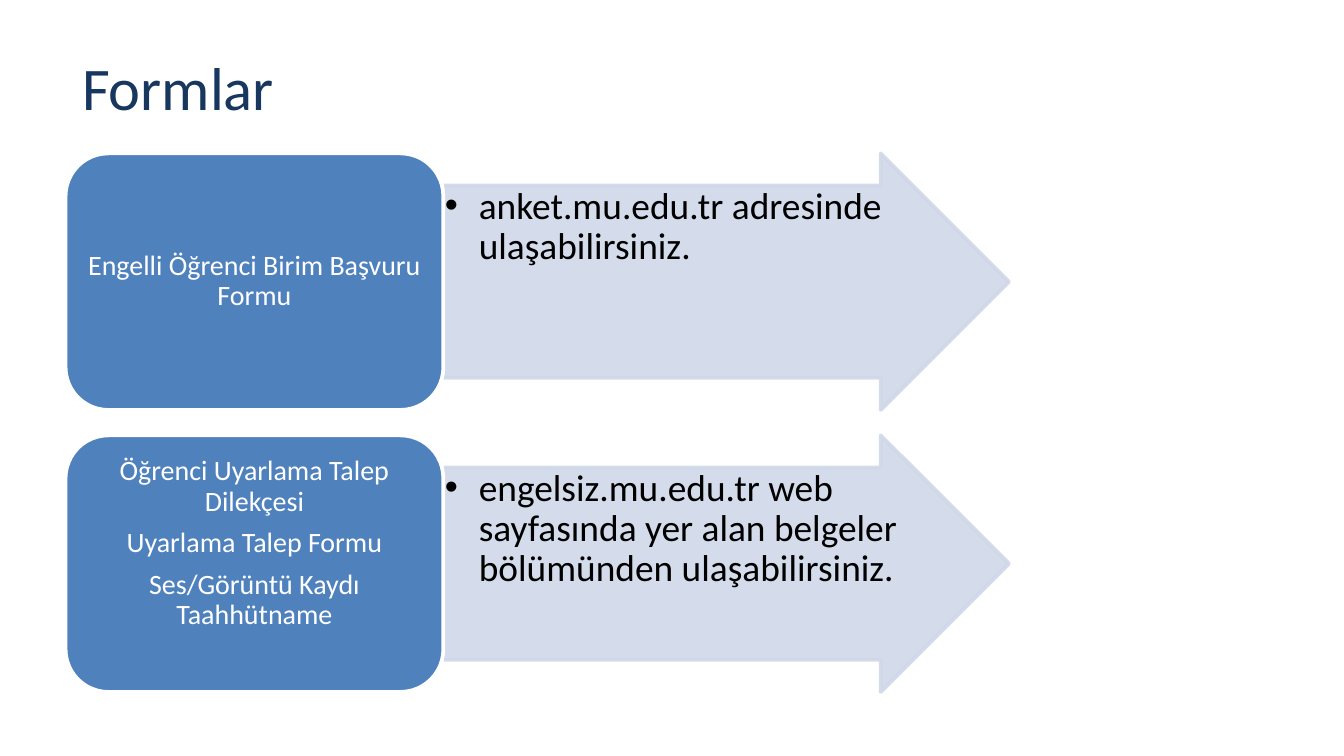
"""Build the slide that shows where each form can be found."""

import dataclasses

import lxml.etree
import pptx
import pptx.dml.color
import pptx.enum.shapes
import pptx.enum.text
import pptx.oxml.ns
import pptx.util

Cm = pptx.util.Cm
Pt = pptx.util.Pt
ALIGN = pptx.enum.text.PP_ALIGN
ANCHOR = pptx.enum.text.MSO_ANCHOR
SHAPE = pptx.enum.shapes.MSO_SHAPE
qn = pptx.oxml.ns.qn

FONT = "Calibri"
NAVY, BLUE, PALE, WHITE, BLACK = "17375E", "4F81BD", "D0D8E8", "FFFFFF", "000000"
LEFT, TOP, ROW_STEP, ROW_HEIGHT = 1.24, 2.9, 5.33, 4.85
BOX_WIDTH, ARROW_WIDTH = 7.14, 10.69


@dataclasses.dataclass
class FormRow:
    forms: list[str]
    source: str
    bottom_inset: float = 0.08


ROWS = [
    FormRow(["Engelli Öğrenci Birim Başvuru Formu"], "anket.mu.edu.tr adresinde ulaşabilirsiniz."),
    FormRow(
        ["Öğrenci Uyarlama Talep Dilekçesi", "Uyarlama Talep Formu", "Ses/Görüntü Kaydı Taahhütname"],
        "engelsiz.mu.edu.tr web sayfasında yer alan belgeler bölümünden ulaşabilirsiniz.",
        bottom_inset=0.84,
    ),
]


def color(value: str) -> pptx.dml.color.RGBColor:
    return pptx.dml.color.RGBColor.from_string(value)


def write_text(
    shape, texts: list[str], *, size: float, fill: str, align=ALIGN.LEFT, anchor=ANCHOR.MIDDLE,
    insets=(0.25, 0.13, 0.25, 0.13), line_spacing=0.9, space_after=0, bullet=False,
) -> None:
    frame = shape.text_frame
    frame.word_wrap = True
    frame.auto_size = pptx.enum.text.MSO_AUTO_SIZE.NONE
    frame.vertical_anchor = anchor
    frame.margin_left, frame.margin_top, frame.margin_right, frame.margin_bottom = map(Cm, insets)
    for index, text in enumerate(texts):
        paragraph = frame.paragraphs[0] if index == 0 else frame.add_paragraph()
        paragraph.alignment = align
        paragraph.line_spacing = line_spacing
        paragraph.space_before = Pt(0)
        paragraph.space_after = Pt(space_after)
        if bullet:
            add_bullet(paragraph)
        run = paragraph.add_run()
        run.text = text
        run.font.name = FONT
        run.font.size = Pt(size)
        run.font.color.rgb = color(fill)


def add_bullet(paragraph) -> None:
    paragraph.level = 1
    properties = paragraph._p.get_or_add_pPr()
    properties.set("marL", str(Cm(0.64)))
    properties.set("indent", str(-Cm(0.64)))
    lxml.etree.SubElement(properties, qn("a:buFont")).set("typeface", "Arial")
    lxml.etree.SubElement(properties, qn("a:buChar")).set("char", "•")


def add_panel(slide, kind, left: float, top: float, width: float, *, fill: str, line: str, opacity=100):
    shape = slide.shapes.add_shape(kind, Cm(left), Cm(top), Cm(width), Cm(ROW_HEIGHT))
    shape.shadow.inherit = False
    shape.fill.solid()
    shape.fill.fore_color.rgb = color(fill)
    shape.line.color.rgb = color(line)
    shape.line.width = Pt(2)
    if opacity < 100:
        for element in shape._element.spPr.iter(qn("a:srgbClr")):
            lxml.etree.SubElement(element, qn("a:alpha")).set("val", str(opacity * 1000))
    return shape


def add_row(slide, row: FormRow, top: float) -> None:
    arrow = add_panel(
        slide, SHAPE.RIGHT_ARROW, LEFT + BOX_WIDTH, top, ARROW_WIDTH, fill=PALE, line=PALE, opacity=90
    )
    arrow.adjustments[0] = 0.75
    arrow.adjustments[1] = 0.5
    write_text(
        arrow, [row.source], size=20, fill=BLACK, anchor=ANCHOR.TOP,
        insets=(0.03, 0.03, 0.03, 0.03), bullet=True,
    )
    box = add_panel(slide, SHAPE.ROUNDED_RECTANGLE, LEFT, top, BOX_WIDTH, fill=BLUE, line=WHITE)
    write_text(
        box, row.forms, size=15, fill=WHITE, align=ALIGN.CENTER,
        insets=(0.15, 0.08, 0.15, row.bottom_inset), space_after=6,
    )


def main() -> None:
    presentation = pptx.Presentation()
    presentation.slide_width = Cm(25.4)
    presentation.slide_height = Cm(14.29)
    slide = presentation.slides.add_slide(presentation.slide_layouts[5])
    title = slide.shapes.title
    title.left, title.top, title.width, title.height = Cm(1.3), Cm(0.79), Cm(17.81), Cm(1.7)
    write_text(title, ["Formlar"], size=32.4, fill=NAVY, line_spacing=1.0)
    for index, row in enumerate(ROWS):
        add_row(slide, row, TOP + index * ROW_STEP)
    presentation.save("out.pptx")


if __name__ == "__main__":
    main()
